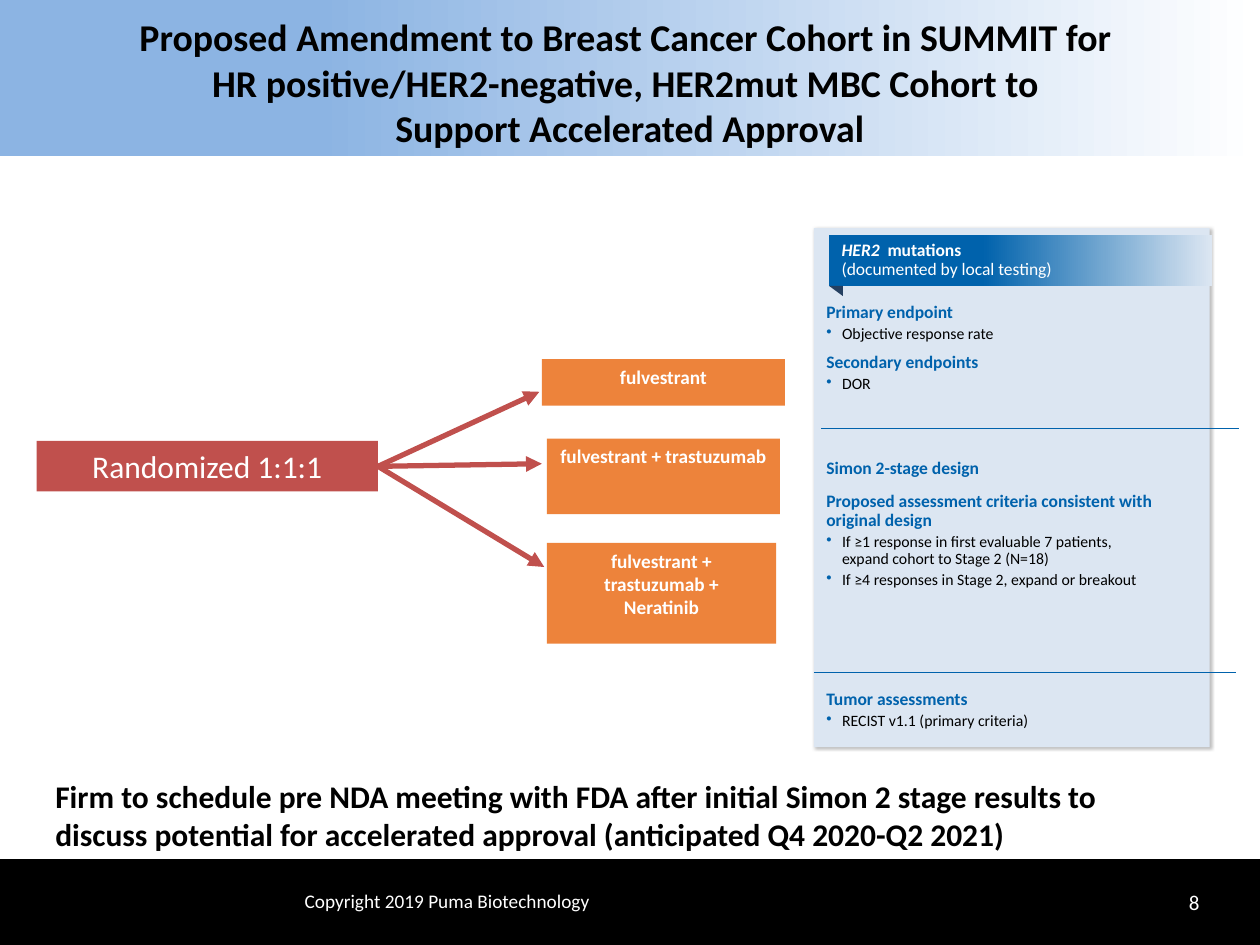
from lxml.etree import SubElement
from pptx import Presentation
from pptx.dml.color import RGBColor
from pptx.enum.shapes import MSO_CONNECTOR, MSO_SHAPE
from pptx.enum.text import MSO_ANCHOR, PP_ALIGN
from pptx.oxml.ns import qn
from pptx.util import Pt

COLORS = {
    "black": "000000", "white": "FFFFFF", "sky": "8CB4E3", "pale": "DCE6F2",
    "blue": "0062AC", "navy": "254061", "orange": "ED833B", "red": "C0504D",
    "shadow": "595959",
}
ALIGN = {"l": PP_ALIGN.LEFT, "c": PP_ALIGN.CENTER, "r": PP_ALIGN.RIGHT}


def rgb(name):
    return RGBColor.from_string(COLORS[name])


class SlideBuilder:
    font = "Calibri"

    def __init__(self, slide):
        self.slide = slide

    def shape(self, box, fill, kind=MSO_SHAPE.RECTANGLE):
        """Filled shape; a (colour, start %, colour) tuple gives a gradient."""
        sp = self.slide.shapes.add_shape(kind, *map(Pt, box))
        sp.shadow.inherit = False
        sp.line.fill.background()
        if isinstance(fill, tuple):
            first, start, last = fill
            sp.fill.gradient()
            sp.fill.gradient_angle = 0
            for stop, color, pos in zip(sp.fill.gradient_stops, (first, last), (start, 1)):
                stop.color.rgb = rgb(color)
                stop.position = pos
        else:
            sp.fill.solid()
            sp.fill.fore_color.rgb = rgb(fill)
        return sp

    def textbox(self, box):
        return self.slide.shapes.add_textbox(*map(Pt, box))

    def frame(self, sp, anchor=MSO_ANCHOR.TOP, insets=(7.2, 3.6, 7.2, 3.6)):
        tf = sp.text_frame
        tf.word_wrap = True
        tf.vertical_anchor = anchor
        tf.margin_left, tf.margin_top, tf.margin_right, tf.margin_bottom = map(Pt, insets)
        return tf

    def paragraph(self, tf, first=False, align="l", spacing=None, before=None, bullet=False):
        p = tf.paragraphs[0] if first else tf.add_paragraph()
        p.alignment = ALIGN[align]
        if bullet:
            pPr = p._p.get_or_add_pPr()
            pPr.set("marL", str(Pt(9)))
            pPr.set("indent", str(-Pt(9)))
            clr = SubElement(pPr, qn("a:buClr"))
            SubElement(clr, qn("a:srgbClr"), val=COLORS["blue"])
            SubElement(pPr, qn("a:buChar"), char="•")
        if spacing:
            p.line_spacing = spacing
        if before and not first:
            p.space_before = Pt(before)
        return p

    def run(self, p, text, size, color, bold=False, italic=False):
        for i, line in enumerate(text.split("\n")):
            if i:
                p.add_line_break()
            r = p.add_run()
            r.text = line
            f = r.font
            f.name, f.size, f.bold, f.italic = self.font, Pt(size), bold, italic
            f.color.rgb = rgb(color)

    def label(self, sp, lines, size, color, bold=False, align="l", **frame):
        tf = self.frame(sp, **frame)
        for i, line in enumerate(lines):
            self.run(self.paragraph(tf, i == 0, align), line, size, color, bold)

    def line(self, start, end, color, width, arrow=False):
        cn = self.slide.shapes.add_connector(MSO_CONNECTOR.STRAIGHT, *map(Pt, start + end))
        cn.line.color.rgb = rgb(color)
        cn.line.width = Pt(width)
        if arrow:
            SubElement(cn.line._get_or_add_ln(), qn("a:tailEnd"), type="triangle")
        SubElement(cn._element.spPr, qn("a:effectLst"))

    def drop_shadow(self, sp):
        effects = sp._element.spPr.find(qn("a:effectLst"))
        outer = SubElement(effects, qn("a:outerShdw"), blurRad=str(Pt(2)),
                           dist=str(Pt(1)), dir=str(45 * 60000))
        clr = SubElement(outer, qn("a:srgbClr"), val=COLORS["shadow"])
        SubElement(clr, qn("a:alpha"), val="40000")


def main():
    prs = Presentation()
    prs.slide_width, prs.slide_height = Pt(720), Pt(540)
    s = SlideBuilder(prs.slides.add_slide(prs.slide_layouts[6]))

    # Footer band and title band
    s.shape((0, 491, 720, 49), "black")
    title = s.shape((0, 0, 720, 89.3), ("sky", 0.25, "white"))
    s.label(title, ["Proposed Amendment to Breast Cancer Cohort in SUMMIT for \n"
                    "HR positive/HER2-negative, HER2mut MBC Cohort to \n"
                    "Support Accelerated Approval"], 21.6, "black", True, "c",
            anchor=MSO_ANCHOR.BOTTOM, insets=(36, 3.6, 36, 3.6))
    s.label(s.textbox((642.2, 501.1, 50.4, 28.8)), ["8"], 12, "white", align="r",
            anchor=MSO_ANCHOR.MIDDLE)
    s.label(s.textbox((167, 504.7, 183, 20.9)), ["Copyright 2019 Puma Biotechnology"],
            11, "white")

    # Treatment arms, each with its arrow from the randomization box
    arms = [
        ((309.6, 205.2, 139, 26.6), ["fulvestrant"], (308.2, 223.9)),
        ((312.5, 250.6, 133.2, 43.2), ["fulvestrant + trastuzumab"], (309.6, 265)),
        ((312.5, 310.3, 131, 57.6), ["fulvestrant + trastuzumab +", "Neratinib"], (311, 324)),
    ]
    for box, lines, tip in arms:
        s.label(s.shape(box, "orange"), lines, 11, "white", True, "c")
        s.line((216, 266.5), tip, "red", 3, arrow=True)
    s.label(s.shape((20.9, 252, 195.1, 28.8), "red"), ["Randomized 1:1:1"], 18, "white",
            align="c")

    # Study design panel: (text, is heading, space before)
    panel = s.shape((465.1, 130.3, 226.1, 296.6), "pale")
    s.drop_shadow(panel)
    tf = s.frame(panel, insets=(7.2, 43.2, 7.2, 3.6))
    design = [
        ("Primary endpoint", True, 0),
        ("Objective response rate", False, 2),
        ("Secondary endpoints", True, 6),
        ("DOR", False, 2),
        ("Simon 2-stage design", True, 38),
        ("Proposed assessment criteria consistent with original design", True, 8),
        ("If ≥1 response in first evaluable 7 patients, \nexpand cohort to Stage 2 (N=18)",
         False, 2),
        ("If ≥4 responses in Stage 2, expand or breakout", False, 2),
        ("Tumor assessments", True, 58),
        ("RECIST v1.1 (primary criteria)", False, 2),
    ]
    for i, (text, heading, before) in enumerate(design):
        p = s.paragraph(tf, i == 0, spacing=0.9, before=before, bullet=not heading)
        s.run(p, text, 10 if heading else 9, "blue" if heading else "black", heading)

    # Panel ribbon with its fold
    ribbon = s.shape((473.8, 134.6, 218.9, 28.8), ("blue", 0.4, "pale"))
    tf = s.frame(ribbon, MSO_ANCHOR.MIDDLE)
    p = s.paragraph(tf, True, spacing=0.9)
    s.run(p, "HER2 ", 10, "white", True, True)
    s.run(p, " mutations", 10, "white", True)
    s.run(s.paragraph(tf, spacing=0.9), "(documented by local testing)", 10, "white")
    fold = s.shape((473.8, 163.4, 7.9, 5.8), "navy", MSO_SHAPE.RIGHT_TRIANGLE)
    fold.rotation = 180

    # Panel dividers
    for left, right, y in ((469.4, 707.8, 244.8), (465.1, 706.3, 384.5)):
        s.line((left, y), (right, y), "blue", 0.5)

    # Closing statement
    s.label(s.textbox((24.5, 440.6, 666, 51.1)),
            ["Firm to schedule pre NDA meeting with FDA after initial Simon 2 stage results to "
             "discuss potential for accelerated approval (anticipated Q4 2020-Q2 2021)"],
            18, "black", True)

    prs.save("out.pptx")


if __name__ == "__main__":
    main()
